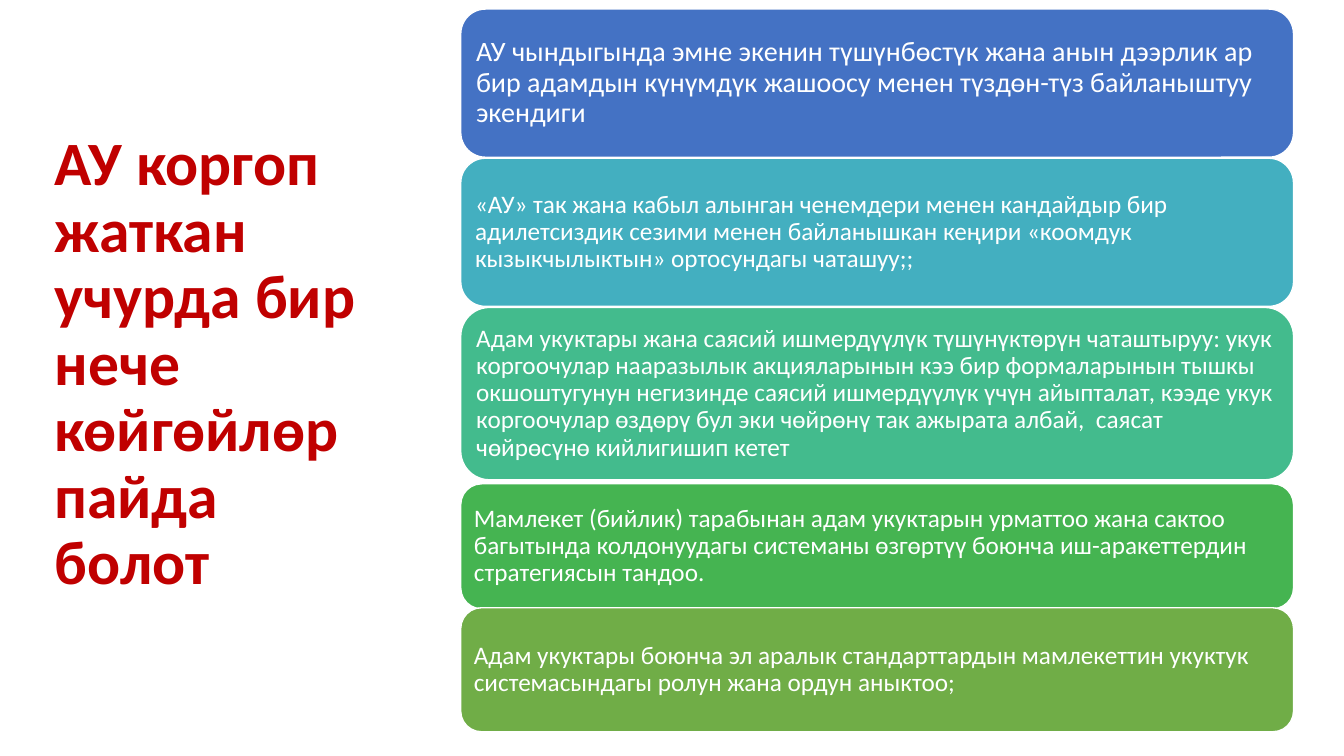
from pptx import Presentation
from pptx.dml.color import RGBColor
from pptx.enum.shapes import MSO_SHAPE as SHAPE
from pptx.enum.text import MSO_ANCHOR as ANCHOR, MSO_AUTO_SIZE as FIT, PP_ALIGN as ALIGN
from pptx.util import Inches, Pt

PROBLEMS = [
    (0.09, 1.47, "4472C4", 20, 0.08,
     "АУ чындыгында эмне экенин түшүнбөстүк жана анын дээрлик ар бир адамдын "
     "күнүмдүк жашоосу менен түздөн-түз байланыштуу экендиги"),
    (1.57, 1.47, "43AFC0", 18, 0.07,
     "«АУ» так жана кабыл алынган ченемдери менен кандайдыр бир адилетсиздик сезими "
     "менен байланышкан кеңири «коомдук кызыкчылыктын» ортосундагы чаташуу;;"),
    (3.05, 1.71, "43BB8D", 18, 0.07,
     "Адам укуктары жана саясий ишмердүүлүк түшүнүктөрүн чаташтыруу: укук коргоочулар "
     "нааразылык акцияларынын кээ бир формаларынын тышкы окшоштугунун негизинде саясий "
     "ишмердүүлүк үчүн айыпталат, кээде укук коргоочулар өздөрү бул эки чөйрөнү так "
     "ажырата албай,  саясат чөйрөсүнө кийлигишип кетет"),
    (4.8, 1.24, "45B451", 18, 0.07,
     "Мамлекет (бийлик) тарабынан адам укуктарын урматтоо жана сактоо багытында "
     "колдонуудагы системаны өзгөртүү боюнча иш-аракеттердин стратегиясын тандоо."),
    (6.03, 1.23, "70AD47", 18, 0.07,
     "Адам укуктары боюнча эл аралык стандарттардын мамлекеттин укуктук системасындагы "
     "ролун жана ордун аныктоо;"),
]


def rgb(value):
    return RGBColor.from_string(value)


class Deck:
    font = "Calibri"
    white = "FFFFFF"
    title_color = "C00000"

    def __init__(self):
        self.prs = Presentation()
        self.prs.slide_width = Inches(13.33)
        self.prs.slide_height = Inches(7.5)

    def add_slide(self):
        self.slide = self.prs.slides.add_slide(self.prs.slide_layouts[5])

    def set_text(self, sp, text, size, color, bold=False):
        tf = sp.text_frame
        tf.text = text
        tf.word_wrap = True
        tf.auto_size = FIT.NONE
        tf.vertical_anchor = ANCHOR.MIDDLE
        p = tf.paragraphs[0]
        p.alignment = ALIGN.LEFT
        p.line_spacing = 0.9
        font = p.runs[0].font
        font.name = self.font
        font.size = Pt(size)
        font.bold = bold
        font.color.rgb = rgb(color)
        return tf

    def title(self, text, left, top, width, height):
        sp = self.slide.shapes.title
        sp.left, sp.top = Inches(left), Inches(top)
        sp.width, sp.height = Inches(width), Inches(height)
        self.set_text(sp, text, 44, self.title_color, bold=True)

    def card(self, top, height, fill, size, inset, text):
        sp = self.slide.shapes.add_shape(
            SHAPE.ROUNDED_RECTANGLE, Inches(4.57), Inches(top), Inches(8.26), Inches(height))
        sp.shadow.inherit = False
        sp.fill.solid()
        sp.fill.fore_color.rgb = rgb(fill)
        sp.line.color.rgb = rgb(self.white)
        sp.line.width = Pt(1)
        tf = self.set_text(sp, text, size, self.white)
        tf.margin_left = tf.margin_right = Inches(inset)
        tf.margin_top = tf.margin_bottom = Inches(inset)


def main():
    deck = Deck()
    deck.add_slide()
    deck.title("АУ коргоп жаткан учурда бир нече көйгөйлөр пайда болот",
               0.44, 0.36, 3.43, 6.53)
    for problem in PROBLEMS:
        deck.card(*problem)
    deck.prs.save("out.pptx")


if __name__ == "__main__":
    main()
